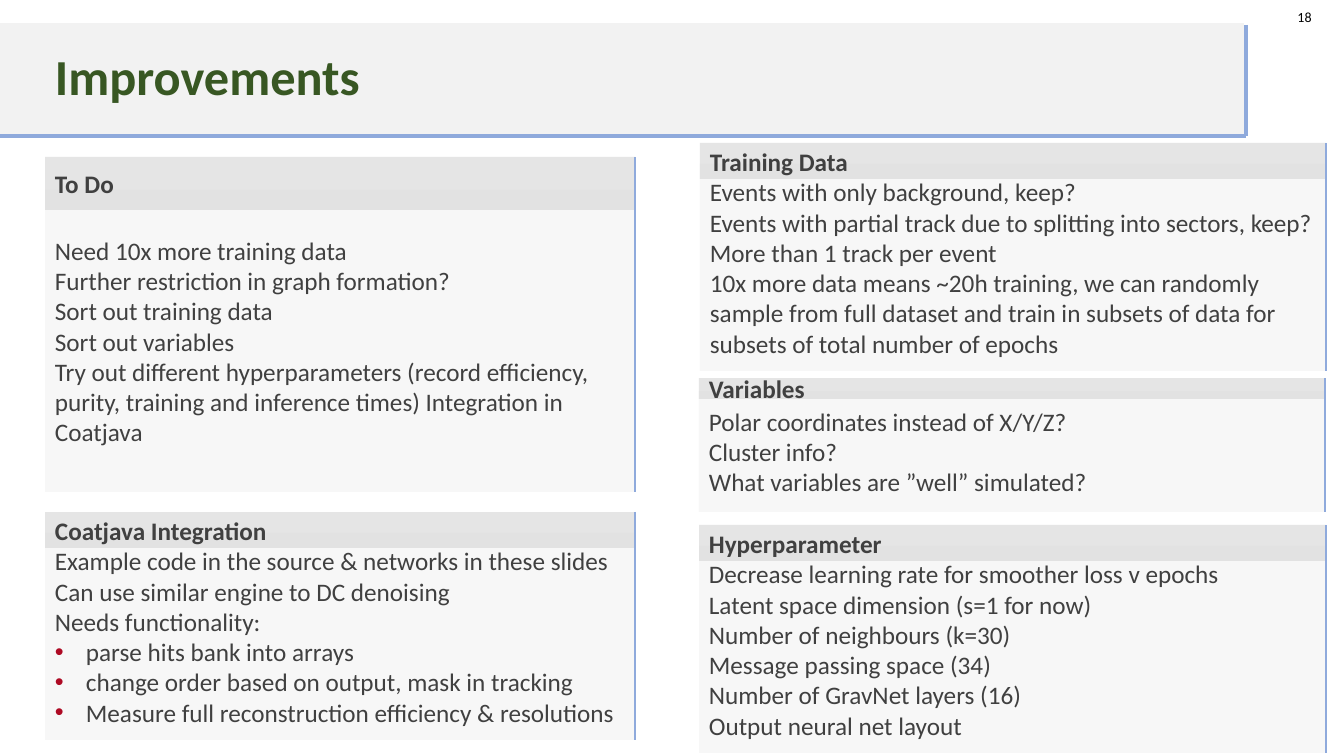
from lxml import etree
from pptx import Presentation
from pptx.dml.color import RGBColor
from pptx.enum.shapes import MSO_CONNECTOR, MSO_SHAPE
from pptx.enum.text import MSO_ANCHOR, PP_ALIGN
from pptx.oxml.ns import qn
from pptx.util import Pt

PX = 914400 / 100.8
RECTANGLE = MSO_SHAPE.RECTANGLE
STRAIGHT = MSO_CONNECTOR.STRAIGHT
FONT = "Calibri"
BULLET = "• "
BULLET_INDENT = 31
GREY, BLUE, TEXT, RED = "F2F2F2", "8FAADC", "404040", "AE0A24"

presentation = Presentation()
presentation.slide_width = round(1344 * PX)
presentation.slide_height = round(756 * PX)
slide = presentation.slides.add_slide(presentation.slide_layouts[6])


def add_box(box, fill, opacity, lines, size=18, color=TEXT, bold=False):
    """Add a rectangle with one paragraph per line; a newline is a line break."""
    shape = slide.shapes.add_shape(RECTANGLE, *(round(value * PX) for value in box))
    shape.shadow.inherit = False
    shape.line.fill.background()
    if fill:
        shape.fill.solid()
        shape.fill.fore_color.rgb = RGBColor.from_string(fill)
        color_element = shape.fill._xPr.find(qn("a:solidFill"))[0]
        etree.SubElement(color_element, qn("a:alpha")).set("val", str(opacity * 1000))
    else:
        shape.fill.background()
    frame = shape.text_frame
    frame.word_wrap = True
    frame.vertical_anchor = MSO_ANCHOR.MIDDLE
    for index, line in enumerate(lines):
        paragraph = frame.paragraphs[0] if index == 0 else frame.add_paragraph()
        paragraph.alignment = PP_ALIGN.LEFT
        if line.startswith(BULLET):
            properties = paragraph._p.get_or_add_pPr()
            properties.set("marL", str(round(BULLET_INDENT * PX)))
            properties.set("indent", str(round(-BULLET_INDENT * PX)))
            bullet_color = etree.SubElement(properties, qn("a:buClr"))
            etree.SubElement(bullet_color, qn("a:srgbClr")).set("val", RED)
            etree.SubElement(properties, qn("a:buFont")).set("typeface", "Arial")
            etree.SubElement(properties, qn("a:buChar")).set("char", BULLET.strip())
            line = line.removeprefix(BULLET)
        for part_index, part in enumerate(line.split("\n")):
            if part_index:
                paragraph.add_line_break()
            run = paragraph.add_run()
            run.text = part
            run.font.name = FONT
            run.font.size = Pt(size)
            run.font.bold = bold
            run.font.color.rgb = RGBColor.from_string(color)
    return shape


def add_line(x1, y1, x2, y2, width):
    line = slide.shapes.add_connector(
        STRAIGHT, *(round(value * PX) for value in (x1, y1, x2, y2)))
    line.line.color.rgb = RGBColor.from_string(BLUE)
    line.line.width = Pt(width)
    etree.SubElement(line._element.spPr, qn("a:effectLst"))


# Title banner and slide number
add_box((0, 23, 1244, 113), GREY, 100, [])
add_line(0, 136, 1246, 136, 3)
add_line(1246, 25, 1246, 136, 3)
title = add_box((45, 53, 1199, 53), None, 0, ["Improvements"], 36, "385723", True)
title.text_frame.paragraphs[0].line_spacing = 0.9
number = add_box((1265, 0, 79, 33), None, 0, ["18"], 10, "000000")
number.text_frame.paragraphs[0].alignment = PP_ALIGN.CENTER

# Panels: left, top, width, header height, body top, body height, heading, lines
panels = [
    (700, 143, 626, 36, 164, 207, "Training Data", [
        "Events with only background, keep?",
        "Events with partial track due to splitting into sectors, keep?\n"
        "More than 1 track per event",
        "10x more data means ~20h training, we can randomly sample from full dataset "
        "and train in subsets of data for subsets of total number of epochs"]),
    (699, 378, 626, 21, 391, 121, "Variables", [
        "Polar coordinates instead of X/Y/Z?",
        "Cluster info?",
        "What variables are ”well” simulated?"]),
    (45, 157, 590, 53, 190, 302, "To Do", [
        "Need 10x more training data",
        "Further restriction in graph formation?",
        "Sort out training data",
        "Sort out variables",
        "Try out different hyperparameters (record efficiency, purity, training and "
        "inference times) Integration in Coatjava"]),
    (699, 525, 627, 36, 546, 207, "Hyperparameter", [
        "Decrease learning rate for smoother loss v epochs",
        "Latent space dimension (s=1 for now)",
        "Number of neighbours (k=30)",
        "Message passing space (34)",
        "Number of GravNet layers (16)",
        "Output neural net layout"]),
    (45, 512, 590, 36, 533, 207, "Coatjava Integration", [
        "Example code in the source & networks in these slides",
        "Can use similar engine to DC denoising",
        "Needs functionality:",
        "• parse hits bank into arrays",
        "• change order based on output, mask in tracking",
        "• Measure full reconstruction efficiency & resolutions"]),
]
for left, top, width, header_height, body_top, body_height, heading, lines in panels:
    add_box((left, body_top, width, body_height), GREY, 60, lines)
    add_box((left, top, width, header_height), "DBDBDB", 72, [heading], bold=True)
    add_line(left + width, top, left + width, body_top + body_height, 1.5)

presentation.save("out.pptx")
